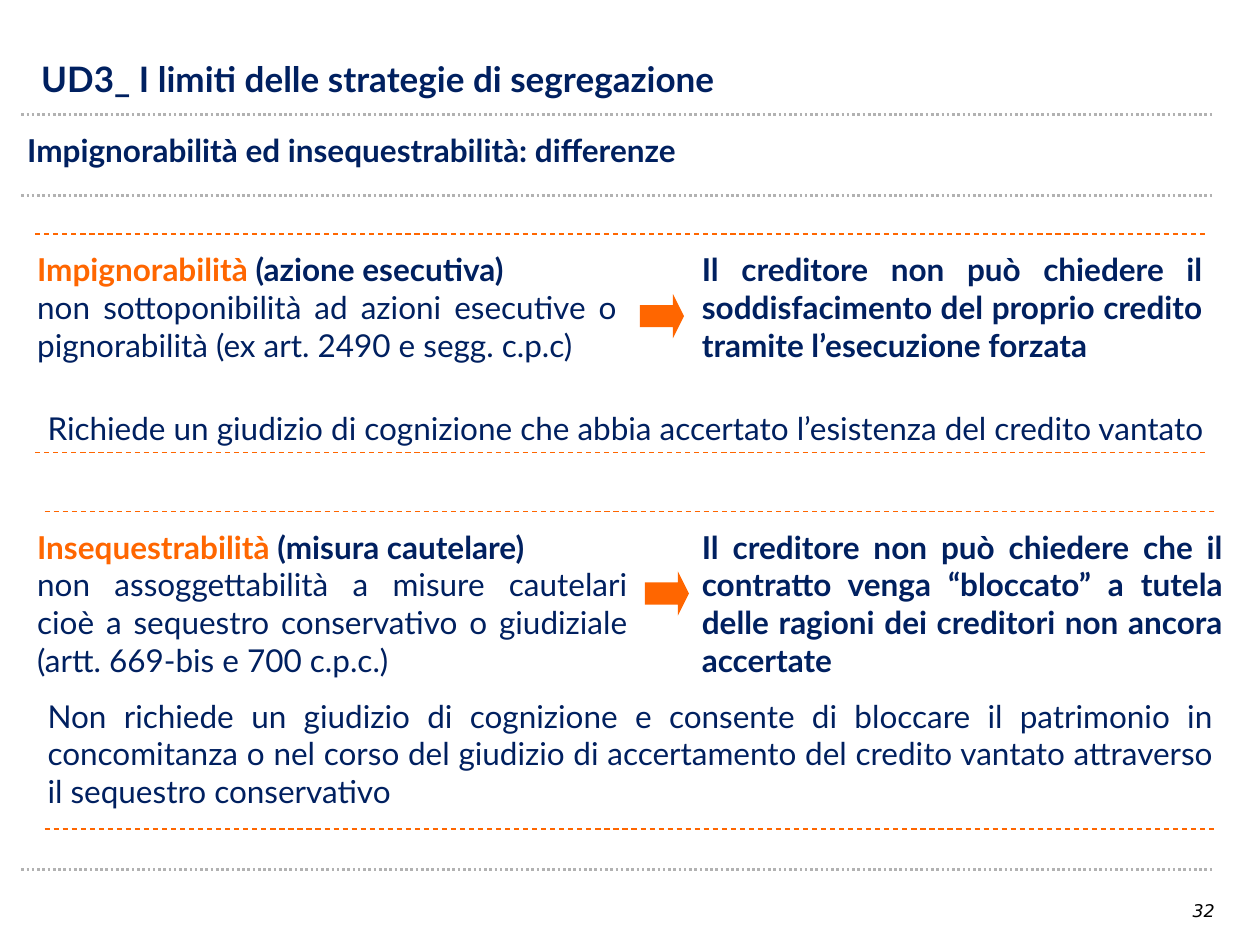
"""Build the slide comparing impignorabilità and insequestrabilità."""
from lxml import etree
from pptx import Presentation
from pptx.dml.color import RGBColor
from pptx.enum import dml, shapes, text
from pptx.oxml import ns
from pptx.util import Cm, Pt

NAVY, ORANGE, GREY, BLACK = "002060", "FF6600", "B2B2B2", "000000"
LEFT, JUSTIFY, CENTER = text.PP_ALIGN.LEFT, text.PP_ALIGN.JUSTIFY, text.PP_ALIGN.CENTER

TITLE = "UD3_ I limiti delle strategie di segregazione"
SUBTITLE = "Impignorabilità ed insequestrabilità: differenze"
PAGE_NUMBER = "32"

SECTIONS = [
    {
        "term": "Impignorabilità",
        "kind": " (azione esecutiva)",
        "meaning": "non sottoponibilità ad azioni esecutive o pignorabilità "
                   "(ex art. 2490 e segg. c.p.c)",
        "effect": "Il creditore non può chiedere il soddisfacimento del proprio "
                  "credito tramite l’esecuzione forzata",
        "note": "Richiede un giudizio di cognizione che abbia accertato "
                "l’esistenza del credito vantato",
        "top": 4.72, "bottom": 9.12, "rule_left": 0.71, "note_top": 8.13,
        "widths": (12.19, 10.59, 24.21), "arrow_left": 12.9,
    },
    {
        "term": "Insequestrabilità",
        "kind": " (misura cautelare)",
        "meaning": "non assoggettabilità a misure cautelari cioè a sequestro "
                   "conservativo o giudiziale (artt. 669-bis e 700 c.p.c.)",
        "effect": "Il creditore non può chiedere che il contratto venga “bloccato” "
                  "a tutela delle ragioni dei creditori non ancora accertate",
        "note": "Non richiede un giudizio di cognizione e consente di bloccare il "
                "patrimonio in concomitanza o nel corso del giudizio di accertamento "
                "del credito vantato attraverso il sequestro conservativo",
        "top": 10.31, "bottom": 16.71, "rule_left": 0.9, "note_top": 13.92,
        "widths": (12.4, 11, 24), "arrow_left": 13,
    },
]
FRAME_RULES = (2.31, 3.94, 17.53)


def color(value):
    return RGBColor.from_string(value)


def add_rule(page, left, top, width, tone, weight, dash):
    line = page.shapes.add_connector(
        shapes.MSO_CONNECTOR.STRAIGHT, Cm(left), Cm(top), Cm(left + width), Cm(top))
    line.line.color.rgb = color(tone)
    line.line.width = Pt(weight)
    line.line.dash_style = dash
    etree.SubElement(line._element.spPr, ns.qn("a:effectLst"))


def add_text(page, left, top, width, height, paras, align=JUSTIFY, size=18,
             font="Lato", italic=False):
    box = page.shapes.add_textbox(Cm(left), Cm(top), Cm(width), Cm(height))
    frame = box.text_frame
    frame.word_wrap = True
    for index, spans in enumerate(paras):
        para = frame.add_paragraph() if index else frame.paragraphs[0]
        para.alignment = align
        for words, tone, bold in spans:
            span = para.add_run()
            span.text = words
            span.font.name = font
            span.font.size = Pt(size)
            span.font.bold = bold
            span.font.italic = italic
            span.font.color.rgb = color(tone)


def add_arrow(page, left, top, side=0.89):
    arrow = page.shapes.add_shape(
        shapes.MSO_SHAPE.RIGHT_ARROW, Cm(left), Cm(top), Cm(side), Cm(side))
    arrow.adjustments[0], arrow.adjustments[1] = 0.5, 0.25
    arrow.fill.solid()
    arrow.fill.fore_color.rgb = color(ORANGE)
    arrow.line.fill.background()
    arrow.shadow.inherit = False


def add_section(page, part):
    term_width, effect_width, note_width = part["widths"]
    text_top = part["top"] + 0.2
    add_text(page, 0.5, text_top, term_width, 3.3, [
        [(part["term"], ORANGE, True), (part["kind"], NAVY, True)],
        [(part["meaning"], NAVY, False)],
    ])
    add_text(page, 13.9, text_top, effect_width, 3.3, [[(part["effect"], NAVY, True)]])
    add_text(page, 0.71, part["note_top"], note_width, 1, [[(part["note"], NAVY, False)]])
    add_arrow(page, part["arrow_left"], part["top"] + 1.21)
    for top in (part["top"], part["bottom"]):
        add_rule(page, part["rule_left"], top, 23.6, ORANGE, 0.75, dml.MSO_LINE.DASH)


def main():
    deck = Presentation()
    deck.slide_width, deck.slide_height = Cm(25.4), Cm(19.05)
    page = deck.slides.add_slide(deck.slide_layouts[6])
    for top in FRAME_RULES:
        add_rule(page, 0.43, top, 24, GREY, 1.5, dml.MSO_LINE.ROUND_DOT)
    add_text(page, 0.58, 1.04, 16.46, 1.12, [[(TITLE, NAVY, True)]], LEFT, 20)
    add_text(page, 0.3, 2.51, 24.46, 1.02, [[(SUBTITLE, NAVY, True)]], LEFT)
    for part in SECTIONS:
        add_section(page, part)
    add_text(page, 23.67, 18.01, 1.19, 0.91, [[(PAGE_NUMBER, BLACK, False)]],
             CENTER, 10, "DejaVu Sans", True)
    deck.save("out.pptx")


if __name__ == "__main__":
    main()
